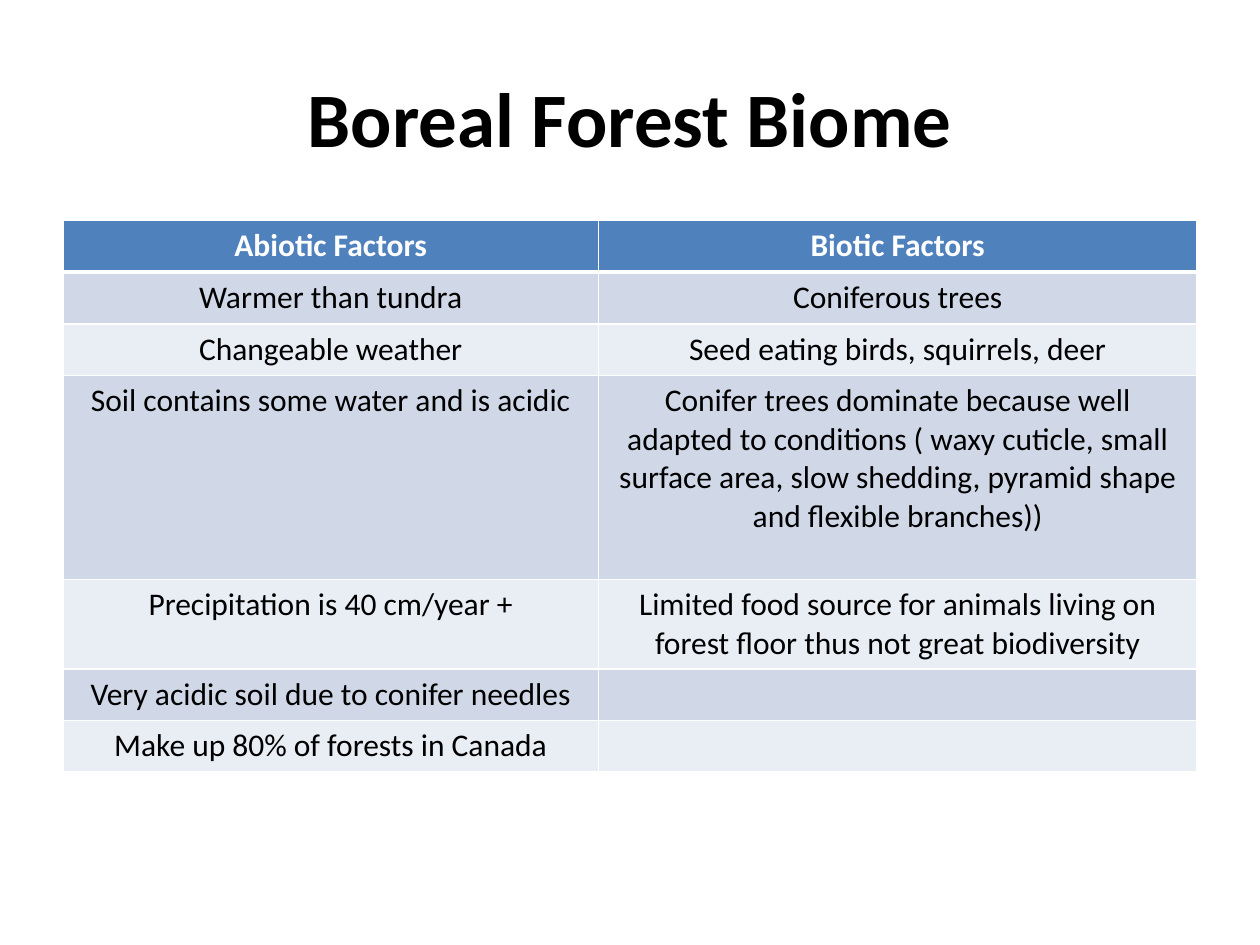
from dataclasses import dataclass

from lxml import etree
from pptx import Presentation
from pptx import util as u
from pptx.dml.color import RGBColor as Rgb
from pptx.enum import text as t
from pptx.oxml import ns


@dataclass(frozen=True)
class Theme:
    font: str = "Calibri"
    title: int = 44
    body: int = 18
    ink: str = "000000"
    white: str = "FFFFFF"
    head: str = "4F81BD"
    bands: tuple[str, str] = ("D0D8E8", "E9EDF4")
    thin: int = 1
    thick: int = 3


@dataclass(frozen=True)
class Row:
    left: str
    right: str = ""
    high: float = 0.41


LOOK = Theme()
ROWS = [
    Row("Abiotic Factors", "Biotic Factors"),
    Row("Warmer than tundra", "Coniferous trees"),
    Row("Changeable weather", "Seed eating birds, squirrels, deer"),
    Row("Soil contains some water and is acidic",
        "Conifer trees dominate because well adapted to conditions "
        "( waxy cuticle, small surface area, slow shedding, pyramid shape "
        "and flexible branches))", 1.62),
    Row("Precipitation is 40 cm/year +",
        "Limited food source for animals living on forest floor "
        "thus not great biodiversity", 0.71),
    Row("Very acidic soil due to conifer needles"),
    Row("Make up 80% of forests in Canada"),
]
WIDTHS = (4.25, 4.75)


def write(frame, words: str, size: int, color: str, bold: bool) -> None:
    frame.text = words
    para = frame.paragraphs[0]
    para.alignment = t.PP_ALIGN.CENTER
    for font in (para.font, *(run.font for run in para.runs)):
        font.name = LOOK.font
        font.size = u.Pt(size)
        font.bold = bold
        font.color.rgb = Rgb.from_string(color)


def edge(cell, side: str, width: int) -> None:
    props = cell._tc.get_or_add_tcPr()
    line = etree.SubElement(props, ns.qn(f"a:ln{side}"), w=str(u.Pt(width)))
    fill = etree.SubElement(line, ns.qn("a:solidFill"))
    etree.SubElement(fill, ns.qn("a:srgbClr"), val=LOOK.white)


def draw_cell(cell, words: str, index: int) -> None:
    head = index == 0
    write(cell.text_frame, words, LOOK.body,
          LOOK.white if head else LOOK.ink, head)
    heavy = {0: "B", 1: "T"}.get(index)
    for side in "LRTB":
        edge(cell, side, LOOK.thick if side == heavy else LOOK.thin)
    cell.fill.solid()
    color = LOOK.head if head else LOOK.bands[(index - 1) % 2]
    cell.fill.fore_color.rgb = Rgb.from_string(color)


def draw_title(slide, words: str) -> None:
    box = slide.shapes.add_textbox(
        u.Inches(0.5), u.Inches(0.3), u.Inches(9), u.Inches(1.25))
    frame = box.text_frame
    frame.word_wrap = True
    frame.vertical_anchor = t.MSO_ANCHOR.MIDDLE
    write(frame, words, LOOK.title, LOOK.ink, True)


def draw_table(slide, rows: list[Row]) -> None:
    table = slide.shapes.add_table(
        len(rows), len(WIDTHS), u.Inches(0.5), u.Inches(1.75),
        u.Inches(sum(WIDTHS)), u.Inches(sum(r.high for r in rows))).table
    for col, width in zip(table.columns, WIDTHS):
        col.width = u.Inches(width)
    for index, row in enumerate(rows):
        table.rows[index].height = u.Inches(row.high)
        for cell, words in zip(table.rows[index].cells, (row.left, row.right)):
            draw_cell(cell, words, index)


def main() -> None:
    deck = Presentation()
    deck.slide_width = u.Inches(10)
    deck.slide_height = u.Inches(7.5)
    slide = deck.slides.add_slide(deck.slide_layouts[6])
    draw_title(slide, "Boreal Forest Biome")
    draw_table(slide, ROWS)
    deck.save("out.pptx")


if __name__ == "__main__":
    main()
